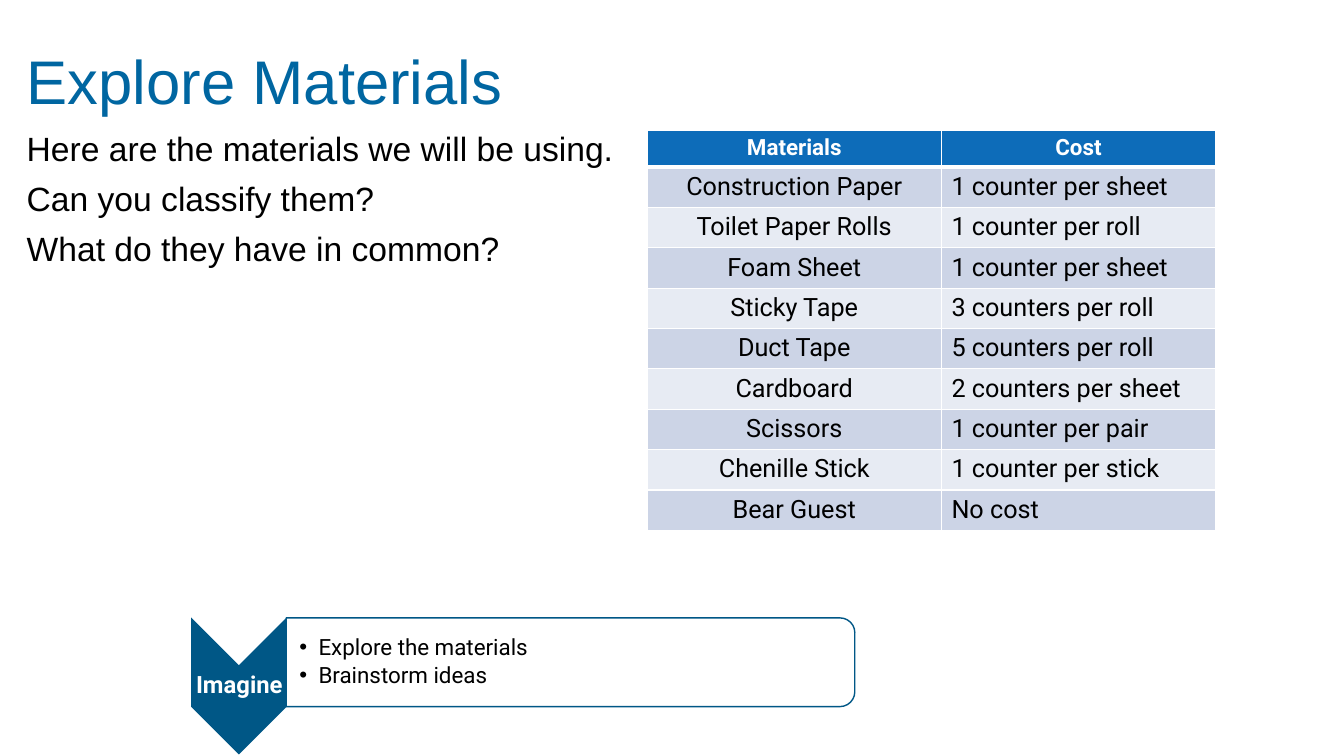
import pptx
import pptx.util
import pptx.dml.color
import pptx.enum.shapes
import pptx.enum.text
import pptx.oxml
import pptx.oxml.ns
from dataclasses import dataclass
from lxml import etree

ALIGN = pptx.enum.text.PP_ALIGN
ANCHOR = pptx.enum.text.MSO_ANCHOR
SHAPE = pptx.enum.shapes.MSO_SHAPE
COLUMNS, ROWS = 80, 45


@dataclass(frozen=True)
class Theme:
    heading_font: str = "Arial"
    detail_font: str = "Roboto"
    title_color: str = "0066A1"
    step_color: str = "005786"
    header_color: str = "0D6CB9"
    bands: tuple = ("CCD4E6", "E7EBF3")
    ink: str = "000000"
    paper: str = "FFFFFF"
    title_size: int = 44
    body_size: int = 24
    cell_size: int = 18
    step_size: int = 17
    small_size: int = 16


def rgb(color):
    return pptx.dml.color.RGBColor.from_string(color)


def add_xml(parent, tag, **attributes):
    child = etree.SubElement(parent, pptx.oxml.ns.qn(tag))
    for name, value in attributes.items():
        child.set(name, str(value))
    return child


class SlideBuilder:
    def __init__(self, deck, theme):
        self.theme = theme
        self.page = deck.slides.add_slide(deck.slide_layouts[6])
        self.column = deck.slide_width / COLUMNS
        self.row = deck.slide_height / ROWS

    def place(self, left, top, width, height):
        return (round(left * self.column), round(top * self.row),
                round(width * self.column), round(height * self.row))

    def add_span(self, para, words, font, size, color, bold=False):
        span = para.add_run()
        span.text = words
        span.font.name = font
        span.font.size = pptx.util.Pt(size)
        span.font.color.rgb = rgb(color)
        span.font.bold = bold

    def text(self, area, lines, font, size, color, bold=False, align=ALIGN.LEFT,
             anchor=ANCHOR.TOP, insets=(0.1, 0.05), before=0, after=0, bullet=None):
        frame = self.page.shapes.add_textbox(*self.place(*area)).text_frame
        frame.word_wrap = True
        frame.vertical_anchor = anchor
        side, edge = insets
        frame.margin_left = frame.margin_right = pptx.util.Inches(side)
        frame.margin_top = frame.margin_bottom = pptx.util.Inches(edge)
        for index, words in enumerate(lines):
            para = frame.add_paragraph() if index else frame.paragraphs[0]
            if bullet:
                properties = para._p.get_or_add_pPr()
                indent = pptx.util.Inches(0.19)
                properties.set("marL", str(indent))
                properties.set("indent", str(-indent))
                add_xml(properties, "a:buFont", typeface="Arial")
                add_xml(properties, "a:buChar", char=bullet)
            para.alignment = align
            para.line_spacing = 0.9
            if index and before:
                para.space_before = pptx.util.Pt(before)
            if after:
                para.space_after = pptx.util.Pt(after)
            self.add_span(para, words, font, size, color, bold)

    def turned_shape(self, kind, area, fill, line=None, opacity=None):
        left, top, width, height = self.place(*area)
        shift = (width - height) // 2
        shape = self.page.shapes.add_shape(kind, left + shift, top - shift, height, width)
        shape.rotation = 90
        shape.shadow.inherit = False
        shape.fill.solid()
        shape.fill.fore_color.rgb = rgb(fill)
        if opacity:
            tint = shape._element.spPr.find(".//" + pptx.oxml.ns.qn("a:srgbClr"))
            add_xml(tint, "a:alpha", val=opacity * 1000)
        if line:
            shape.line.color.rgb = rgb(line)
            shape.line.width = pptx.util.Pt(1)
        else:
            shape.line.fill.background()

    def borders(self, cell, top, bottom):
        properties = cell._tc.get_or_add_tcPr()
        for side, width in (("L", 1), ("R", 1), ("T", top), ("B", bottom)):
            edge = add_xml(properties, "a:ln" + side, w=pptx.util.Pt(width))
            add_xml(add_xml(edge, "a:solidFill"), "a:srgbClr", val=self.theme.paper)

    def table(self, left, top, widths, header_height, row_height, records):
        theme = self.theme
        heights = [header_height] + [row_height] * (len(records) - 1)
        area = self.place(left, top, sum(widths), sum(heights))
        grid = self.page.shapes.add_table(len(records), len(widths), *area).table
        grid.horz_banding = False
        for column, width in zip(grid.columns, widths):
            column.width = round(width * self.column)
        for index, (record, height) in enumerate(zip(records, heights)):
            grid.rows[index].height = round(height * self.row)
            header = index == 0
            for position, words in enumerate(record):
                cell = grid.cell(index, position)
                self.borders(cell, 3 if index == 1 else 1, 3 if header else 1)
                cell.fill.solid()
                cell.fill.fore_color.rgb = rgb(
                    theme.header_color if header else theme.bands[(index - 1) % 2])
                para = cell.text_frame.paragraphs[0]
                centred = header or position == 0
                para.alignment = ALIGN.CENTER if centred else ALIGN.LEFT
                self.add_span(para, words, theme.detail_font,
                              theme.small_size if header else theme.cell_size,
                              theme.paper if header else theme.ink, header)


MATERIALS = [
    ("Materials", "Cost"),
    ("Construction Paper", "1 counter per sheet"),
    ("Toilet Paper Rolls", "1 counter per roll"),
    ("Foam Sheet", "1 counter per sheet"),
    ("Sticky Tape", "3 counters per roll"),
    ("Duct Tape", "5 counters per roll"),
    ("Cardboard", "2 counters per sheet"),
    ("Scissors", "1 counter per pair"),
    ("Chenille Stick", "1 counter per stick"),
    ("Bear Guest", "No cost"),
]
QUESTIONS = [
    "Here are the materials we will be using.",
    "Can you classify them?",
    "What do they have in common?",
]


def main():
    deck = pptx.Presentation()
    deck.slide_width = pptx.util.Inches(13.33)
    deck.slide_height = pptx.util.Inches(7.5)
    theme = Theme()
    slide = SlideBuilder(deck, theme)

    slide.text((1, 0.66, 69, 8.7), ["Explore Materials"], theme.heading_font,
               theme.title_size, theme.title_color, anchor=ANCHOR.MIDDLE)
    slide.turned_shape(SHAPE.CHEVRON, (11.37, 36.75, 5.7, 8.16), theme.step_color)
    slide.text((11.4, 39.6, 5.7, 2.46), ["Imagine"], theme.detail_font,
               theme.step_size, theme.paper, bold=True, align=ALIGN.CENTER,
               anchor=ANCHOR.MIDDLE, insets=(0.01, 0.01))
    slide.turned_shape(SHAPE.ROUND_2_SAME_RECTANGLE, (17.04, 36.78, 33.84, 5.28),
                       theme.paper, line=theme.step_color, opacity=90)
    slide.text((17.1, 37.02, 33.54, 4.8), ["Explore the materials", "Brainstorm ideas"],
               theme.detail_font, theme.small_size, theme.ink, anchor=ANCHOR.MIDDLE,
               insets=(0.12, 0.01), after=2.4, bullet="•")
    slide.text((1, 7.56, 38, 8.8), QUESTIONS, theme.heading_font,
               theme.body_size, theme.ink, before=10)
    slide.table(38.52, 7.74, (17.52, 16.32), 2.2, 2.4, MATERIALS)

    deck.save("out.pptx")


if __name__ == "__main__":
    main()
